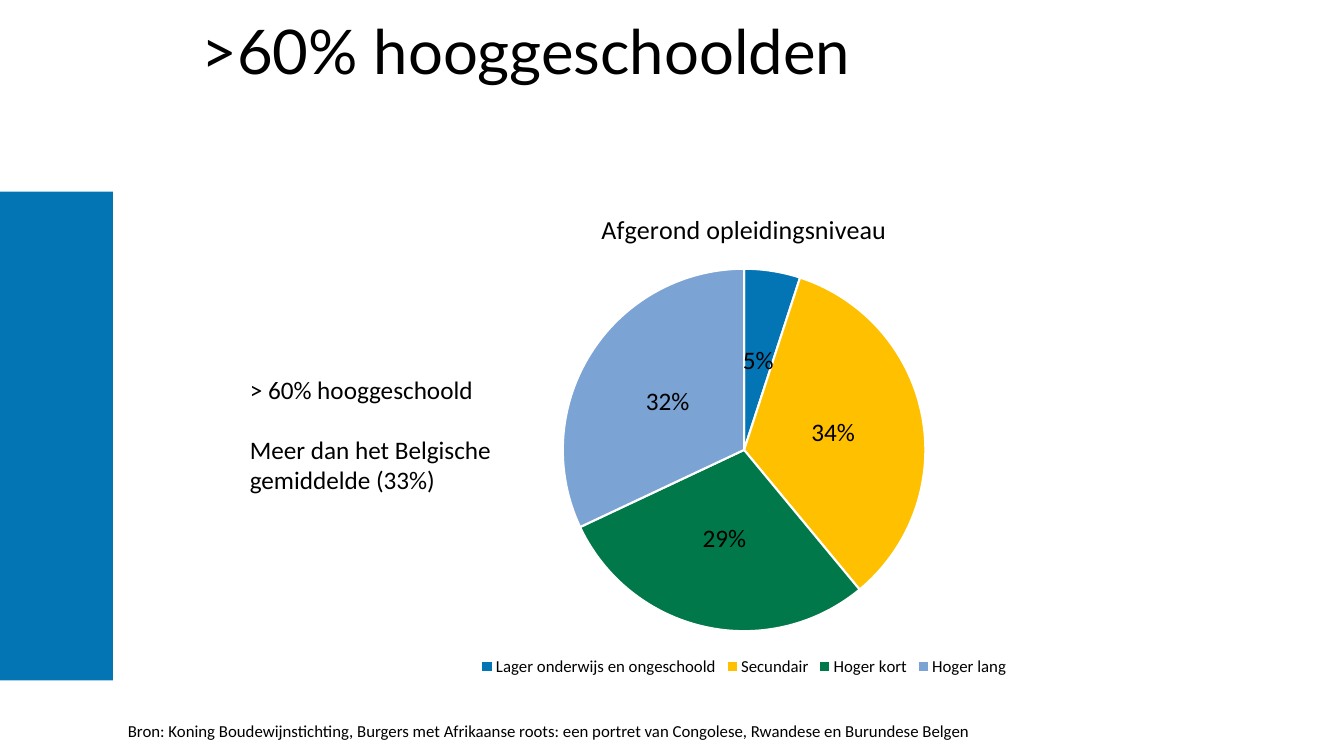
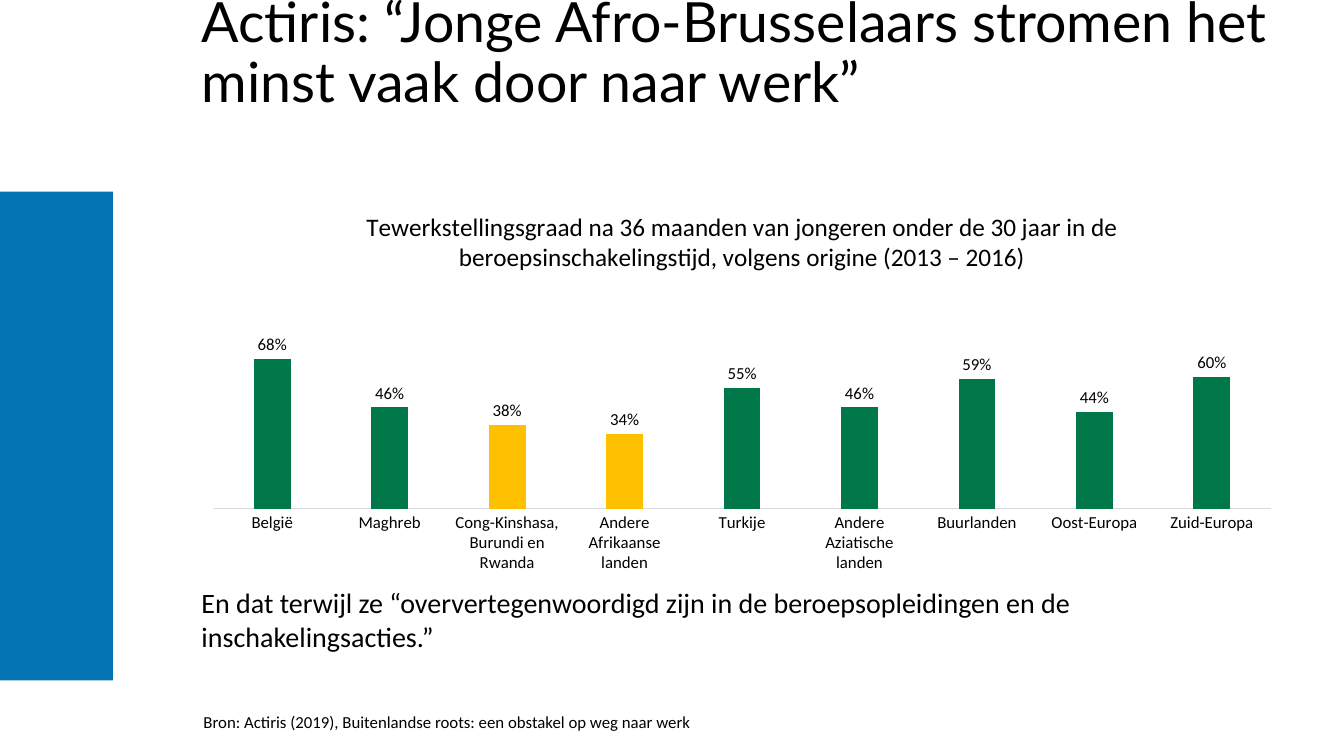
from pptx import Presentation
from pptx.chart.data import CategoryChartData
from pptx.dml.color import RGBColor
from pptx.enum.chart import XL_CHART_TYPE as ChartType
from pptx.enum.chart import XL_LABEL_POSITION as LabelPosition
from pptx.enum.chart import XL_LEGEND_POSITION as LegendPosition
from pptx.enum.chart import XL_TICK_MARK as TickMark
from pptx.enum.shapes import MSO_SHAPE as Shape
from pptx.enum.text import MSO_ANCHOR as Anchor
from pptx.util import Inches, Pt

BLUE, YELLOW, GREEN, PALE_BLUE = "0375B4", "FFC000", "007849", "7BA3D4"
BLACK, WHITE, AXIS_GREY = "000000", "FFFFFF", "D9D9D9"
TITLE_FONT, BODY_FONT = "Lato", "Calibri"

BAND_BOX = (0, 1.9, 1.12, 4.85)
TITLE_BOX = (1.9, 0, 10.94, 1.08)


def color(value):
    return RGBColor.from_string(value)


def inches(box):
    return [Inches(length) for length in box]


def paint(fill, value):
    fill.solid()
    fill.fore_color.rgb = color(value)


def style_font(font, size, name=BODY_FONT):
    font.size = Pt(size)
    font.name = name
    font.bold = False
    font.color.rgb = color(BLACK)


def add_text(page, box, paragraphs, size, name=BODY_FONT, gap=0):
    """Add a wrapping text box with a gap in points between paragraphs."""
    frame = page.shapes.add_textbox(*inches(box)).text_frame
    frame.word_wrap = True
    for index, text in enumerate(paragraphs):
        para = frame.paragraphs[0] if index == 0 else frame.add_paragraph()
        if index:
            para.space_before = Pt(gap)
        span = para.add_run()
        span.text = text
        style_font(span.font, size, name)
    return frame


def add_page(deck, title, title_size):
    """Blank page with the shared side band and title."""
    page = deck.slides.add_slide(deck.slide_layouts[6])
    band = page.shapes.add_shape(Shape.RECTANGLE, *inches(BAND_BOX))
    band.shadow.inherit = False
    paint(band.fill, BLUE)
    band.line.fill.background()

    frame = add_text(page, TITLE_BOX, [title], title_size, TITLE_FONT)
    frame.vertical_anchor = Anchor.MIDDLE
    frame.paragraphs[0].line_spacing = 0.9
    return page


def add_chart(page, box, kind, values, series_name, title, title_size):
    """Chart with one series, given as a category-to-value mapping."""
    data = CategoryChartData()
    data.categories = list(values)
    data.add_series(series_name, list(values.values()))
    chart = page.shapes.add_chart(kind, *inches(box), data).chart
    style_font(chart.font, 10)
    chart.has_title = True
    span = chart.chart_title.text_frame.paragraphs[0].add_run()
    span.text = title
    style_font(span.font, title_size)
    chart.chart_title.include_in_layout = False
    return chart


def style_labels(plot, size, position):
    plot.has_data_labels = True
    labels = plot.data_labels
    labels.number_format = "0%"
    labels.number_format_is_linked = False
    labels.position = position
    style_font(labels.font, size)
    return labels


def add_education_pie(page, box):
    title = "Afgerond opleidingsniveau"
    values = {
        "Lager onderwijs en ongeschoold": 5,
        "Secundair": 34,
        "Hoger kort": 29,
        "Hoger lang": 32,
    }
    chart = add_chart(page, box, ChartType.PIE, values, title, title, 18.6)
    chart.has_legend = True
    chart.legend.position = LegendPosition.BOTTOM
    chart.legend.include_in_layout = False
    style_font(chart.legend.font, 12)

    plot = chart.plots[0]
    plot.vary_by_categories = True
    for index, value in enumerate((BLUE, YELLOW, GREEN, PALE_BLUE)):
        slice_format = plot.series[0].points[index].format
        paint(slice_format.fill, value)
        slice_format.line.color.rgb = color(WHITE)
        slice_format.line.width = Pt(1.5)
    labels = style_labels(plot, 18, LabelPosition.CENTER)
    labels.show_percentage = True
    labels.show_value = False


def add_employment_columns(page, box):
    title = ("Tewerkstellingsgraad na 36 maanden van jongeren onder de 30 jaar "
             "in de beroepsinschakelingstijd, volgens origine (2013 – 2016)")
    values = {
        "België": 0.68,
        "Maghreb": 0.46,
        "Cong-Kinshasa, Burundi en Rwanda": 0.38,
        "Andere Afrikaanse landen": 0.34,
        "Turkije": 0.55,
        "Andere Aziatische landen": 0.46,
        "Buurlanden": 0.59,
        "Oost-Europa": 0.44,
        "Zuid-Europa": 0.6,
    }
    highlighted = (2, 3)
    chart = add_chart(page, box, ChartType.COLUMN_CLUSTERED, values,
                      "Series 1", title, 18)
    chart.has_legend = False

    # Axes
    value_axis = chart.value_axis
    value_axis.visible = False
    value_axis.has_major_gridlines = False
    value_axis.minimum_scale = 0
    value_axis.maximum_scale = 1
    category_axis = chart.category_axis
    category_axis.major_tick_mark = TickMark.NONE
    category_axis.format.line.color.rgb = color(AXIS_GREY)
    category_axis.format.line.width = Pt(0.75)
    style_font(category_axis.tick_labels.font, 12)

    # Columns
    plot = chart.plots[0]
    plot.vary_by_categories = False
    plot.gap_width = 219
    plot.overlap = -27
    series = plot.series[0]
    paint(series.format.fill, GREEN)
    for index in highlighted:
        paint(series.points[index].format.fill, YELLOW)
    style_labels(plot, 12, LabelPosition.OUTSIDE_END).show_value = True


def build_education_page(deck):
    page = add_page(deck, ">60% hooggeschoolden", 44)
    add_education_pie(page, (1.92, 1.9, 10.92, 4.85))
    add_text(page, (2.38, 3.66, 3.2, 1.33),
             ["> 60% hooggeschoold", "Meer dan het Belgische gemiddelde (33%)"],
             18, gap=21.6)
    add_text(page, (1.17, 7.1, 11.67, 0.3),
             ["Bron: Koning Boudewijnstichting, Burgers met Afrikaanse roots: "
              "een portret van Congolese, Rwandese en Burundese Belgen"], 12)


def build_employment_page(deck):
    page = add_page(deck, "Actiris: “Jonge Afro-Brusselaars stromen het minst "
                          "vaak door naar werk”", 39.6)
    add_employment_columns(page, (1.9, 1.9, 10.92, 3.86))
    add_text(page, (1.92, 7.01, 11.67, 0.3),
             ["Bron: Actiris (2019), Buitenlandse roots: een obstakel op weg "
              "naar werk"], 12)
    add_text(page, (1.9, 5.76, 10.92, 0.77),
             ["En dat terwijl ze “oververtegenwoordigd zijn in de "
              "beroepsopleidingen en de inschakelingsacties.”"], 20)


def main():
    deck = Presentation()
    deck.slide_width = Inches(13.33)
    deck.slide_height = Inches(7.5)
    build_education_page(deck)
    build_employment_page(deck)
    deck.save("out.pptx")


if __name__ == "__main__":
    main()
